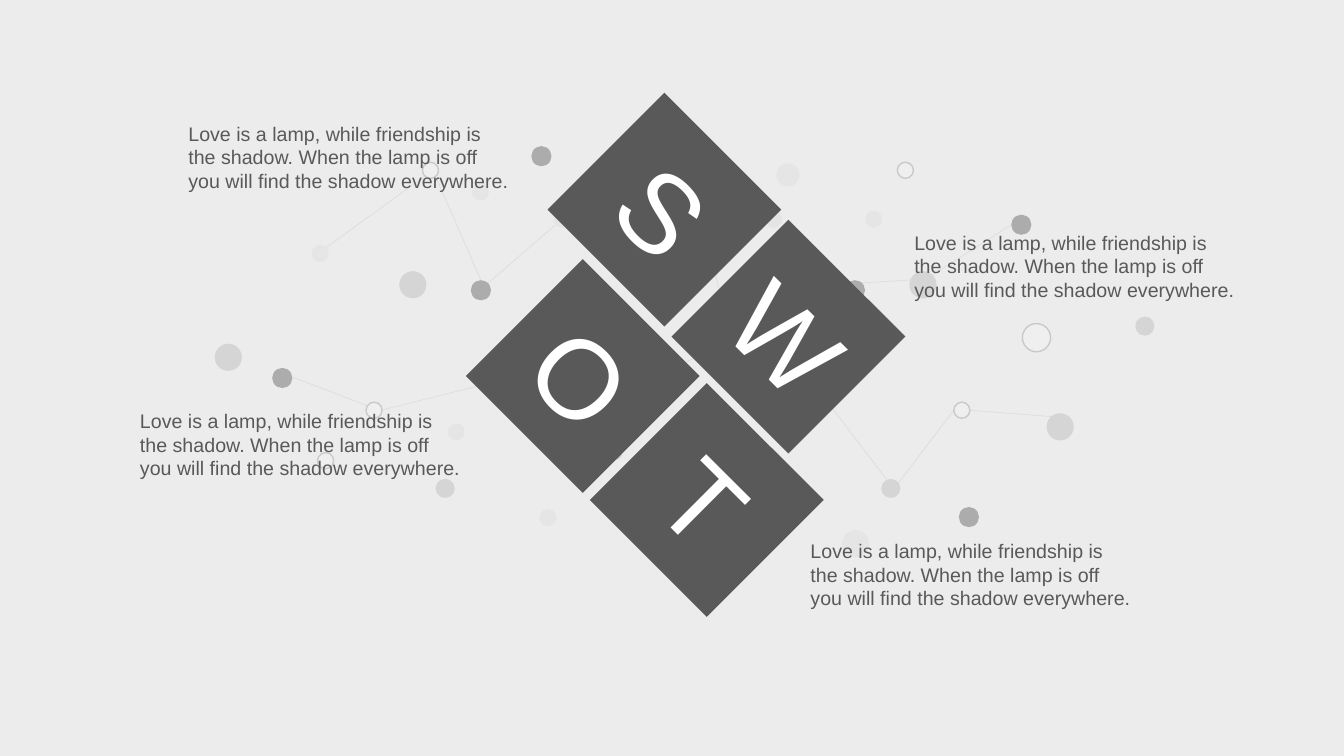
"""Build a SWOT slide: four tilted tiles over a faded network of dots and lines."""
import pptx
import pptx.dml.color
import pptx.enum.shapes
import pptx.enum.text
import pptx.oxml
import pptx.oxml.ns
import pptx.util

Inches = pptx.util.Inches
Pt = pptx.util.Pt
MSO_SHAPE = pptx.enum.shapes.MSO_SHAPE


def color(hex_string):
    return pptx.dml.color.RGBColor.from_string(hex_string)


def add_filled_shape(kind, left, top, width, height, fill):
    shape = slide.shapes.add_shape(
        kind, Inches(left), Inches(top), Inches(width), Inches(height))
    shape.shadow.inherit = False
    shape.fill.solid()
    shape.fill.fore_color.rgb = color(fill)
    shape.line.fill.background()
    return shape


presentation = pptx.Presentation()
presentation.slide_width = Inches(13.33)
presentation.slide_height = Inches(7.5)
slide = presentation.slides.add_slide(presentation.slide_layouts[6])
slide.background.fill.solid()
slide.background.fill.fore_color.rgb = color("ECECEC")

network_lines = [
    (8.41, 2.95, 8.07, 3.72), (9.17, 2.77, 8.49, 2.81), (9.12, 2.81, 10.03, 2.23),
    (7.15, 3.42, 6.67, 3.66), (3.78, 4.07, 5.18, 3.72), (2.9, 3.74, 3.71, 4.05),
    (6.03, 4.46, 5.2, 3.73), (6.15, 4.43, 6.58, 3.66), (7.06, 2.6, 7.27, 3.37),
    (7.35, 3.36, 8, 3.79), (9.62, 4.07, 10.52, 4.14), (8.88, 4.83, 9.46, 4.07),
    (8.85, 4.83, 8.04, 3.77), (5.52, 2.17, 6.3, 2.22), (5.51, 2.23, 4.84, 2.81),
    (6.41, 2.33, 6.97, 2.57), (3.23, 2.46, 4.21, 1.75), (4.77, 2.78, 4.32, 1.75),
]
for ends in network_lines:
    connector = slide.shapes.add_connector(
        pptx.enum.shapes.MSO_CONNECTOR.STRAIGHT, *[Inches(value) for value in ends])
    connector.line.color.rgb = color("BFBFBF")
    connector.line.width = Pt(0.5)
    connector._element.spPr.append(pptx.oxml.parse_xml(
        f"<a:effectLst {pptx.oxml.ns.nsdecls('a')}/>"))

dots_by_fill = {
    "262626": [
        (10.03, 2.13, 0.2), (8.38, 2.78, 0.2), (9.51, 5.03, 0.2), (5.27, 1.45, 0.2),
        (4.67, 2.78, 0.2), (2.7, 3.65, 0.2), (6.8, 5.21, 0.24)],
    "A6A6A6": [
        (9.02, 2.69, 0.27), (11.26, 3.14, 0.19), (10.38, 4.1, 0.27), (8.74, 4.75, 0.19),
        (2.13, 3.41, 0.27), (3.96, 2.69, 0.27), (4.32, 4.75, 0.19), (5.83, 3.28, 0.21),
        (6.51, 1.17, 0.27), (6.49, 3.48, 0.27)],
    "D9D9D9": [
        (8.58, 2.09, 0.17), (7.59, 2.09, 0.17), (7.73, 5.05, 0.17), (7.85, 3.65, 0.27),
        (8.35, 5.26, 0.27), (3.09, 2.43, 0.17), (4.68, 1.82, 0.17), (5.49, 2.09, 0.17),
        (5.35, 5.05, 0.17), (5.12, 3.65, 0.27), (4.44, 4.2, 0.17), (7.7, 1.62, 0.23)],
    "F7F7F7": [
        (9.46, 3.99, 0.16), (8.9, 1.61, 0.16), (6.97, 2.49, 0.16), (7.08, 4.4, 0.16),
        (10.14, 3.21, 0.28), (3.63, 3.99, 0.16), (4.19, 1.61, 0.16), (6.28, 2.19, 0.16),
        (6.01, 4.4, 0.16), (3.15, 4.49, 0.16), (7.18, 3.28, 0.23)],
}
for fill, dots in dots_by_fill.items():
    for left, top, size in dots:
        dot = add_filled_shape(MSO_SHAPE.OVAL, left, top, size, size, fill)
        if fill == "F7F7F7":
            dot.line.color.rgb = color("808080")
            dot.line.width = Pt(1)

veil = add_filled_shape(MSO_SHAPE.RECTANGLE, 0, 0, 13.33, 7.5, "ECECEC")
veil_color = veil._element.spPr.find(".//" + pptx.oxml.ns.qn("a:srgbClr"))
veil_color.append(pptx.oxml.parse_xml(
    f"<a:alpha {pptx.oxml.ns.nsdecls('a')} val='68000'/>"))

caption = ("Love is a lamp, while friendship is the shadow. "
           "When the lamp is off you will find the shadow everywhere.")
for left, top in [(1.77, 1.16), (1.29, 4.01), (8.97, 2.24), (7.94, 5.3)]:
    text_box = slide.shapes.add_textbox(
        Inches(left), Inches(top), Inches(3.4), Inches(0.8))
    text_frame = text_box.text_frame
    text_frame.word_wrap = True
    text_frame.auto_size = pptx.enum.text.MSO_AUTO_SIZE.SHAPE_TO_FIT_TEXT
    text_frame.text = caption
    font = text_frame.paragraphs[0].runs[0].font
    font.name = "Arial"
    font.size = Pt(14)
    font.color.rgb = color("595959")

tiles = [("W", 7, 2.52), ("T", 6.19, 4.14), ("S", 5.77, 1.26), ("O", 4.96, 2.91)]
for letter, left, top in tiles:
    tile = add_filled_shape(MSO_SHAPE.RECTANGLE, left, top, 1.64, 1.64, "595959")
    tile.rotation = 45
    text_frame = tile.text_frame
    text_frame.vertical_anchor = pptx.enum.text.MSO_ANCHOR.MIDDLE
    text_frame.text = letter
    paragraph = text_frame.paragraphs[0]
    paragraph.alignment = pptx.enum.text.PP_ALIGN.CENTER
    font = paragraph.runs[0].font
    font.name = "Arial"
    font.size = Pt(80)
    font.color.rgb = color("FFFFFF")

presentation.save("out.pptx")
